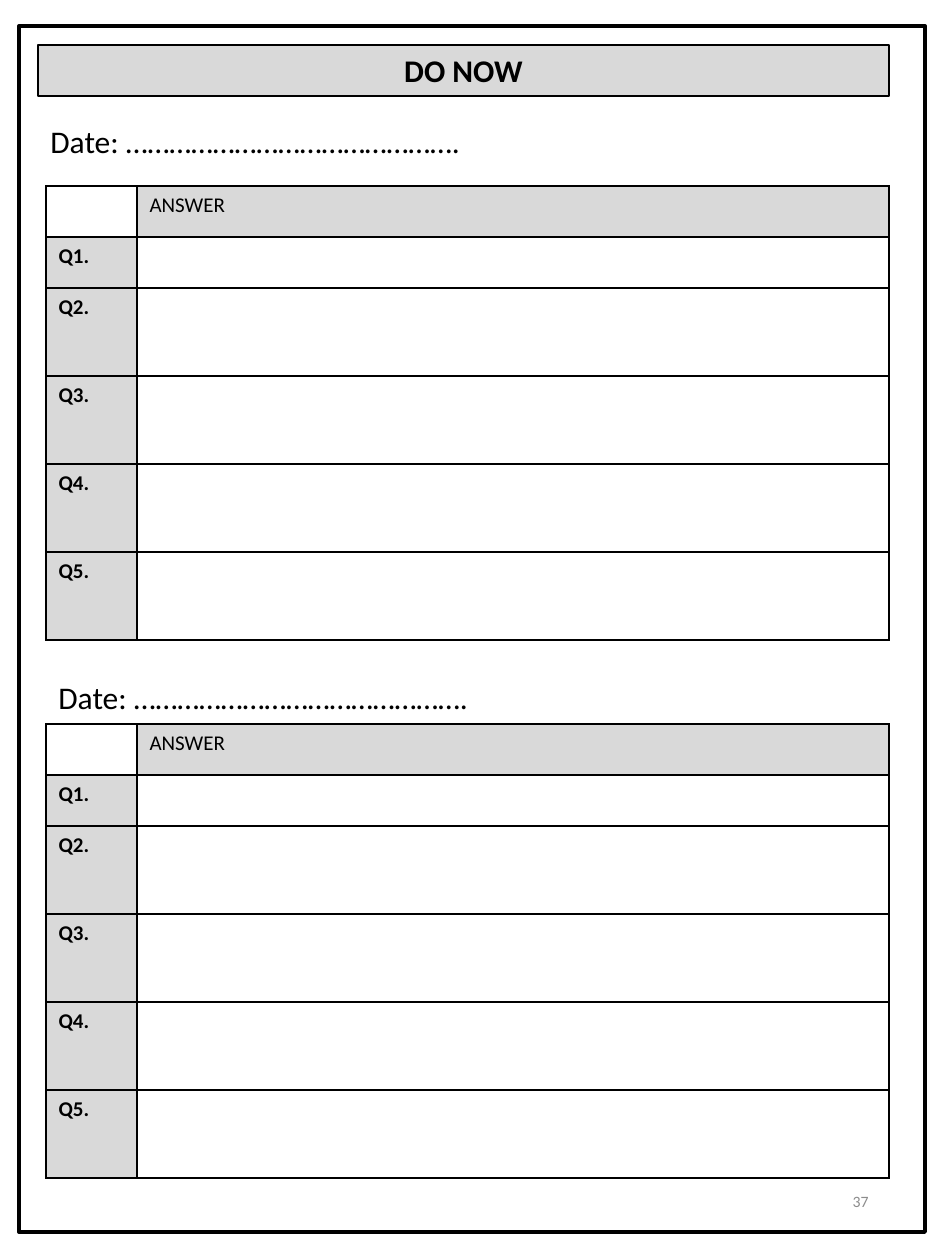
import pptx
import pptx.dml.color
import pptx.enum.shapes
import pptx.enum.text
import pptx.oxml
import pptx.oxml.ns
import pptx.util

EMU_PER_PX = 914400 / 126
BLACK = "000000"
GREY = "D9D9D9"
ALIGN = pptx.enum.text.PP_ALIGN
ANCHOR = pptx.enum.text.MSO_ANCHOR


def px(*lengths):
    return [pptx.util.Emu(round(length * EMU_PER_PX)) for length in lengths]


def write(frame, text, size=18, color=BLACK, bold=False, align=ALIGN.LEFT, anchor=ANCHOR.TOP):
    frame.word_wrap = True
    frame.vertical_anchor = anchor
    paragraph = frame.paragraphs[0]
    paragraph.alignment = align
    run = paragraph.add_run()
    run.text = text
    run.font.name = "Calibri"
    run.font.size = pptx.util.Pt(size)
    run.font.bold = bold
    run.font.color.rgb = pptx.dml.color.RGBColor.from_string(color)


presentation = pptx.Presentation()
presentation.slide_width, presentation.slide_height = px(945, 1260)
slide = presentation.slides.add_slide(presentation.slide_layouts[6])

# Page frame and title bar
bars = []
for box, fill, line_width in [
    ((19, 26, 906, 1206), None, 2.25),
    ((38, 45, 851, 51), GREY, 0.75),
]:
    shape = slide.shapes.add_shape(pptx.enum.shapes.MSO_SHAPE.RECTANGLE, *px(*box))
    shape.shadow.inherit = False
    if fill:
        shape.fill.solid()
        shape.fill.fore_color.rgb = pptx.dml.color.RGBColor.from_string(fill)
    else:
        shape.fill.background()
    shape.line.color.rgb = pptx.dml.color.RGBColor.from_string(BLACK)
    shape.line.width = pptx.util.Pt(line_width)
    bars.append(shape)
write(bars[1].text_frame, "DO NOW", bold=True, align=ALIGN.CENTER)

# Two dated answer grids
column_widths = px(91, 752)
row_heights = px(51, 51, 88, 88, 88, 88)
for date_left, date_top, table_top in [(38, 116, 186), (46, 672, 724)]:
    date_box = slide.shapes.add_textbox(*px(date_left, date_top, 649, 51))
    write(date_box.text_frame, "Date: ……………………………………….")

    table = slide.shapes.add_table(6, 2, *px(46, table_top, 843, 454)).table
    table.first_row = False
    table.horz_banding = False
    for column, width in zip(table.columns, column_widths):
        column.width = width
    for row_index, height in enumerate(row_heights):
        table.rows[row_index].height = height
        for column_index in range(2):
            cell = table.cell(row_index, column_index)
            properties = cell._tc.get_or_add_tcPr()
            for side in ("lnL", "lnR", "lnT", "lnB"):
                properties.append(pptx.oxml.parse_xml(
                    f'<a:{side} {pptx.oxml.ns.nsdecls("a")} w="12700"><a:solidFill>'
                    f'<a:srgbClr val="{BLACK}"/></a:solidFill></a:{side}>'))
            if (row_index == 0) != (column_index == 0):
                cell.fill.solid()
                cell.fill.fore_color.rgb = pptx.dml.color.RGBColor.from_string(GREY)
                text = f"Q{row_index}." if row_index else "ANSWER"
                write(cell.text_frame, text, size=12, bold=row_index > 0)
            else:
                cell.fill.background()

# Page number
number_box = slide.shapes.add_textbox(*px(668, 1168, 213, 67))
write(number_box.text_frame, "37", size=9, color="8C8C8C", align=ALIGN.RIGHT, anchor=ANCHOR.MIDDLE)

presentation.save("out.pptx")
